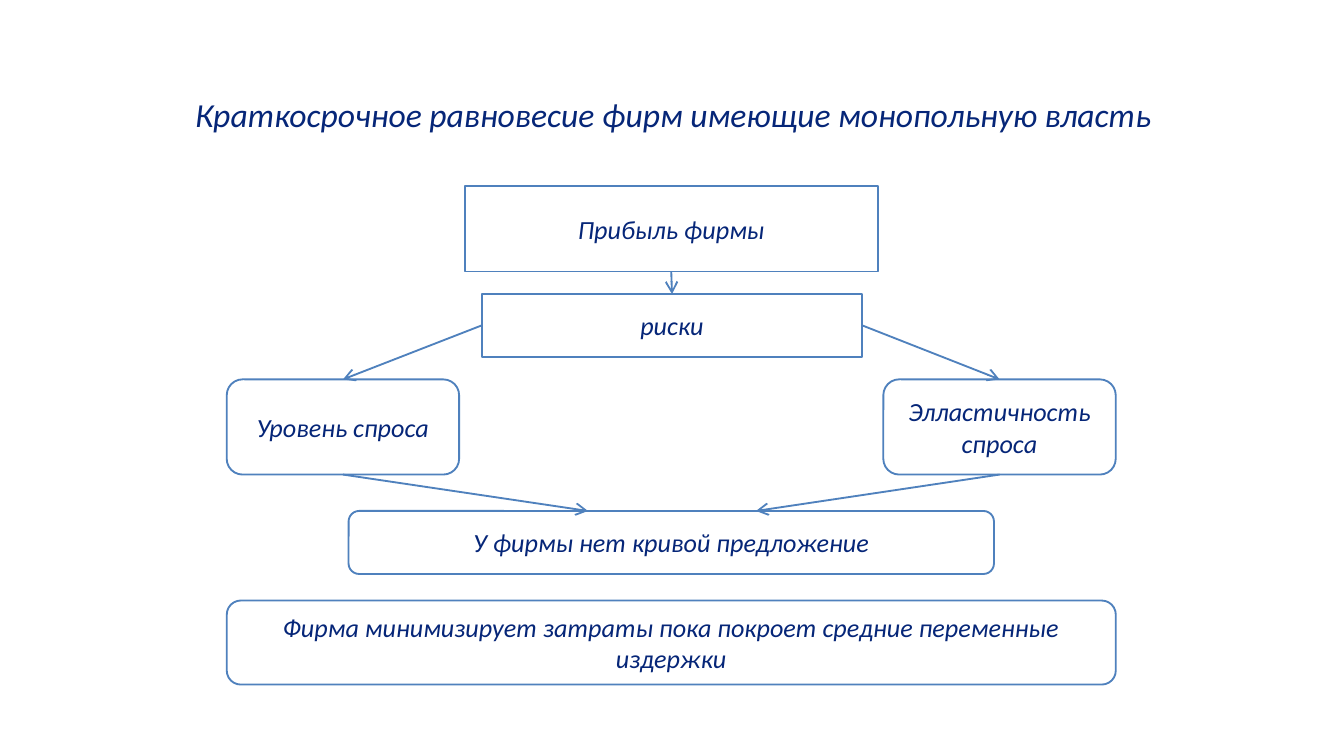
"""Builds the slide on short-run equilibrium of firms with monopoly power."""
import dataclasses

import lxml.etree
import pptx
import pptx.dml.color
import pptx.enum.shapes
import pptx.enum.text
import pptx.oxml.ns
import pptx.util

RECT = pptx.enum.shapes.MSO_SHAPE.RECTANGLE
ROUNDED = pptx.enum.shapes.MSO_SHAPE.ROUNDED_RECTANGLE
TOP, LEFT, BOTTOM, RIGHT = range(4)


@dataclasses.dataclass(frozen=True)
class Theme:
    font: str = "Calibri"
    ink: str = "062678"
    outline: str = "4F81BD"
    paper: str = "FFFFFF"
    title_size: int = 18
    body_size: int = 14
    line_width: int = 1


class Diagram:
    EMU_PER_PX = 9525

    def __init__(self, slide, theme):
        self.slide = slide
        self.theme = theme

    def px(self, *lengths):
        return [pptx.util.Emu(length * self.EMU_PER_PX) for length in lengths]

    def color(self, value):
        return pptx.dml.color.RGBColor.from_string(value)

    def label(self, frame, text, size):
        frame.text = text
        frame.word_wrap = True
        frame.vertical_anchor = pptx.enum.text.MSO_ANCHOR.MIDDLE
        paragraph = frame.paragraphs[0]
        paragraph.alignment = pptx.enum.text.PP_ALIGN.CENTER
        paragraph.font.name = self.theme.font
        paragraph.font.size = pptx.util.Pt(size)
        paragraph.font.italic = True
        paragraph.font.color.rgb = self.color(self.theme.ink)

    def stroke(self, line):
        line.color.rgb = self.color(self.theme.outline)
        line.width = pptx.util.Pt(self.theme.line_width)

    def title(self, text, *box):
        heading = self.slide.shapes.title
        heading.left, heading.top, heading.width, heading.height = self.px(*box)
        self.label(heading.text_frame, text, self.theme.title_size)

    def box(self, text, kind, *box):
        node = self.slide.shapes.add_shape(kind, *self.px(*box))
        node.shadow.inherit = False
        node.fill.solid()
        node.fill.fore_color.rgb = self.color(self.theme.paper)
        self.stroke(node.line)
        self.label(node.text_frame, text, self.theme.body_size)
        return node

    def arrow(self, source, source_side, target=None, target_side=TOP, end=(0, 0)):
        link = self.slide.shapes.add_connector(
            pptx.enum.shapes.MSO_CONNECTOR.STRAIGHT, *self.px(0, 0, *end))
        link.begin_connect(source, source_side)
        if target is not None:
            link.end_connect(target, target_side)
        self.stroke(link.line)
        qn = pptx.oxml.ns.qn
        properties = link._element.spPr
        lxml.etree.SubElement(properties.find(qn("a:ln")), qn("a:tailEnd"), type="arrow")
        lxml.etree.SubElement(properties, qn("a:effectLst"))


def main():
    deck = pptx.Presentation()
    deck.slide_width, deck.slide_height = (
        pptx.util.Emu(side * Diagram.EMU_PER_PX) for side in (960, 540))
    diagram = Diagram(deck.slides.add_slide(deck.slide_layouts[5]), Theme())

    diagram.title("Краткосрочное равновесие фирм имеющие монопольную власть",
                  49, 44, 864, 75)
    profit = diagram.box("Прибыль фирмы", RECT, 332, 133, 295, 61)
    risks = diagram.box("риски", RECT, 344, 210, 272, 45)
    demand_level = diagram.box("Уровень спроса", ROUNDED, 162, 271, 166, 68)
    elasticity = diagram.box("Элластичность спроса", ROUNDED, 631, 271, 166, 68)
    diagram.box("У фирмы нет кривой предложение", ROUNDED, 249, 365, 461, 45)

    diagram.arrow(profit, BOTTOM, risks)
    for factor, risk_side, supply_x in ((demand_level, LEFT, 420),
                                        (elasticity, RIGHT, 540)):
        diagram.arrow(risks, risk_side, factor)
        diagram.arrow(factor, BOTTOM, end=(supply_x, 365))

    diagram.box("Фирма минимизирует затраты пока покроет средние переменные издержки",
                ROUNDED, 162, 429, 635, 60)
    deck.save("out.pptx")


if __name__ == "__main__":
    main()
